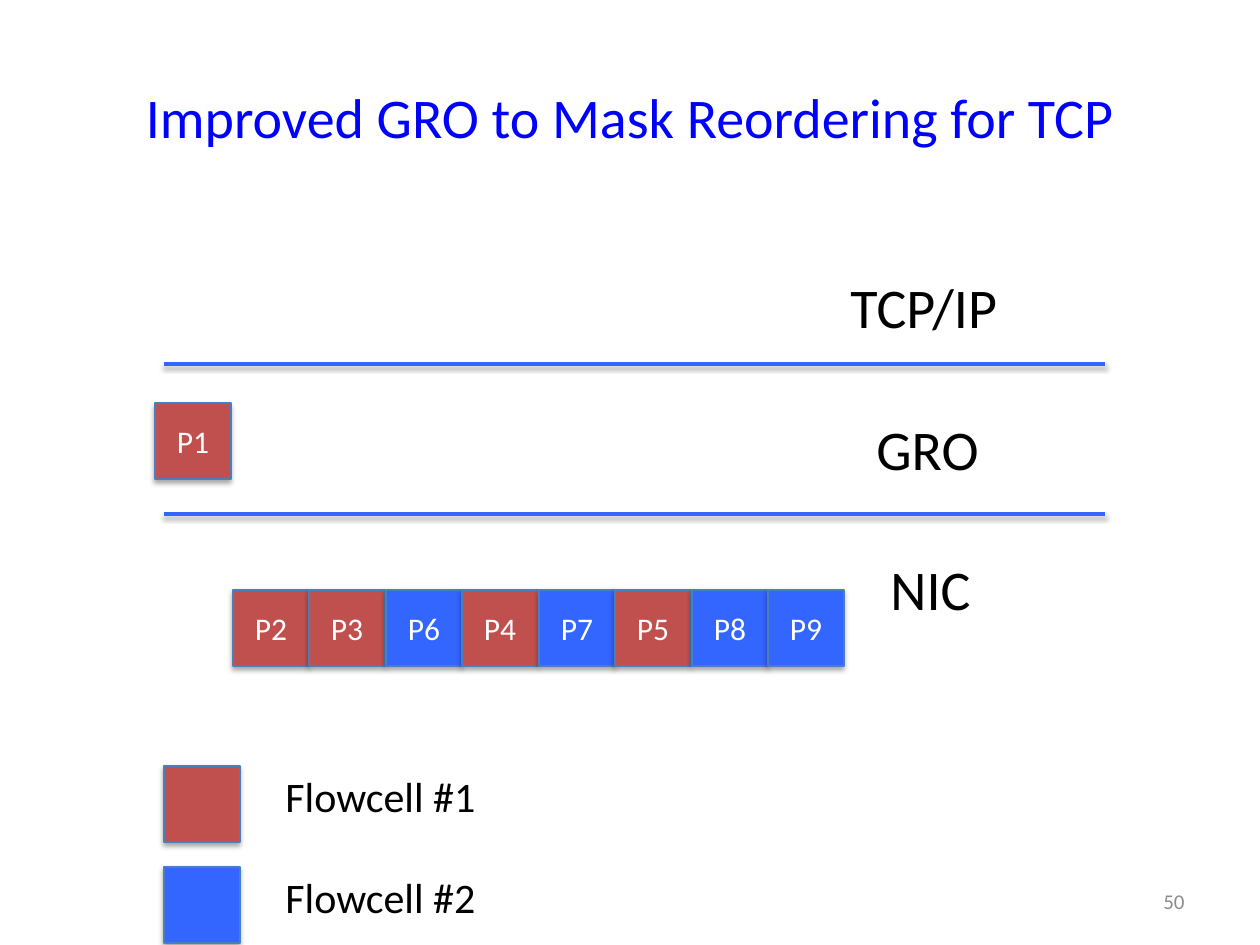
from lxml import etree
from pptx import Presentation
from pptx.dml.color import RGBColor
from pptx.enum.shapes import MSO_CONNECTOR, MSO_SHAPE
from pptx.enum.text import MSO_ANCHOR, MSO_AUTO_SIZE, PP_ALIGN
from pptx.oxml.ns import nsdecls
from pptx.util import Emu, Inches, Pt

PX = Inches(1) // 126
FONT = "Calibri"
BLACK = RGBColor(0x00, 0x00, 0x00)
WHITE = RGBColor(0xFF, 0xFF, 0xFF)
GREY = RGBColor(0x8C, 0x8C, 0x8C)
TITLE_BLUE = RGBColor(0x00, 0x00, 0xFF)
OUTLINE = RGBColor(0x4B, 0x7E, 0xBC)
RED = RGBColor(0xC0, 0x50, 0x4D)
BLUE = RGBColor(0x33, 0x66, 0xFF)

# Content
TITLE = "Improved GRO to Mask Reordering for TCP"
PAGE = "50"
FLOWCELLS = [("Flowcell #1", RED), ("Flowcell #2", BLUE)]
GRO_PACKET = ("P1", RED)
NIC_QUEUE = [("P2", RED), ("P3", RED), ("P6", BLUE), ("P4", RED),
             ("P7", BLUE), ("P5", RED), ("P8", BLUE), ("P9", BLUE)]
LAYERS = [("TCP/IP", (838, 266, 178, 81)),
          ("GRO", (864, 408, 130, 81)),
          ("NIC", (878, 548, 106, 81))]

# Layout in px
CELL = 76
QUEUE_LEFT, QUEUE_TOP, QUEUE_SPAN = 233, 590, 612
LINE_LEFT, LINE_RIGHT = 164, 1105
LINE_TOPS = [364, 514]
LEGEND_TOP, LEGEND_STEP = 766, 101


def px(*values):
    return [Emu(v * PX) for v in values]


def add_shadow(shape, opacity, offset):
    shape._element.spPr.append(etree.fromstring(
        f'<a:effectLst {nsdecls("a")}><a:outerShdw blurRad="{Pt(3.1)}" '
        f'dist="{Pt(offset)}" dir="5400000" rotWithShape="0">'
        f'<a:srgbClr val="000000"><a:alpha val="{opacity * 1000}"/></a:srgbClr>'
        '</a:outerShdw></a:effectLst>'))


def write(shape, text, size, color, align=PP_ALIGN.LEFT, anchor=MSO_ANCHOR.TOP):
    tf = shape.text_frame
    tf.text = text
    tf.vertical_anchor = anchor
    p = tf.paragraphs[0]
    p.alignment = align
    font = p.runs[0].font
    font.name, font.size, font.color.rgb = FONT, Pt(size), color


def add_label(s, text, box, size):
    tb = s.shapes.add_textbox(*px(*box))
    tb.text_frame.word_wrap = False
    tb.text_frame.auto_size = MSO_AUTO_SIZE.SHAPE_TO_FIT_TEXT
    write(tb, text, size, BLACK)


def add_cell(s, left, top, color, text=""):
    sp = s.shapes.add_shape(MSO_SHAPE.RECTANGLE, *px(left, top, CELL, CELL))
    sp.fill.solid()
    sp.fill.fore_color.rgb = color
    sp.line.color.rgb = OUTLINE
    sp.line.width = Pt(0.75)
    add_shadow(sp, 35, 1.8)
    if text:
        write(sp, text, 18, WHITE, PP_ALIGN.CENTER, MSO_ANCHOR.MIDDLE)


def main():
    prs = Presentation()
    prs.slide_width, prs.slide_height = Inches(10), Inches(7.5)
    s = prs.slides.add_slide(prs.slide_layouts[5])

    # Title and page number
    title = s.shapes.title
    title.left, title.top, title.width, title.height = px(63, 38, 1134, 157)
    write(title, TITLE, 32, TITLE_BLUE, PP_ALIGN.CENTER, MSO_ANCHOR.MIDDLE)
    number = s.shapes.add_textbox(*px(903, 876, 294, 50))
    number.text_frame.word_wrap = True
    write(number, PAGE, 12, GREY, PP_ALIGN.RIGHT, MSO_ANCHOR.MIDDLE)

    # Packets in GRO and waiting in the NIC
    name, color = GRO_PACKET
    add_cell(s, 155, 403, color, name)
    for i, (name, color) in enumerate(NIC_QUEUE):
        left = QUEUE_LEFT + i * QUEUE_SPAN // len(NIC_QUEUE)
        add_cell(s, left, QUEUE_TOP, color, name)

    # Layer borders and names
    for y in LINE_TOPS:
        line = s.shapes.add_connector(MSO_CONNECTOR.STRAIGHT,
                                      *px(LINE_LEFT, y, LINE_RIGHT, y))
        line.line.color.rgb = BLUE
        line.line.width = Pt(2)
        add_shadow(line, 38, 1.6)
    for name, box in LAYERS:
        add_label(s, name, box, 32)

    # Legend
    for i, (name, color) in enumerate(FLOWCELLS):
        top = LEGEND_TOP + i * LEGEND_STEP
        add_cell(s, LINE_LEFT, top, color)
        add_label(s, name, (273, top - 2, 218, 63), 24)

    prs.save("out.pptx")


if __name__ == "__main__":
    main()
